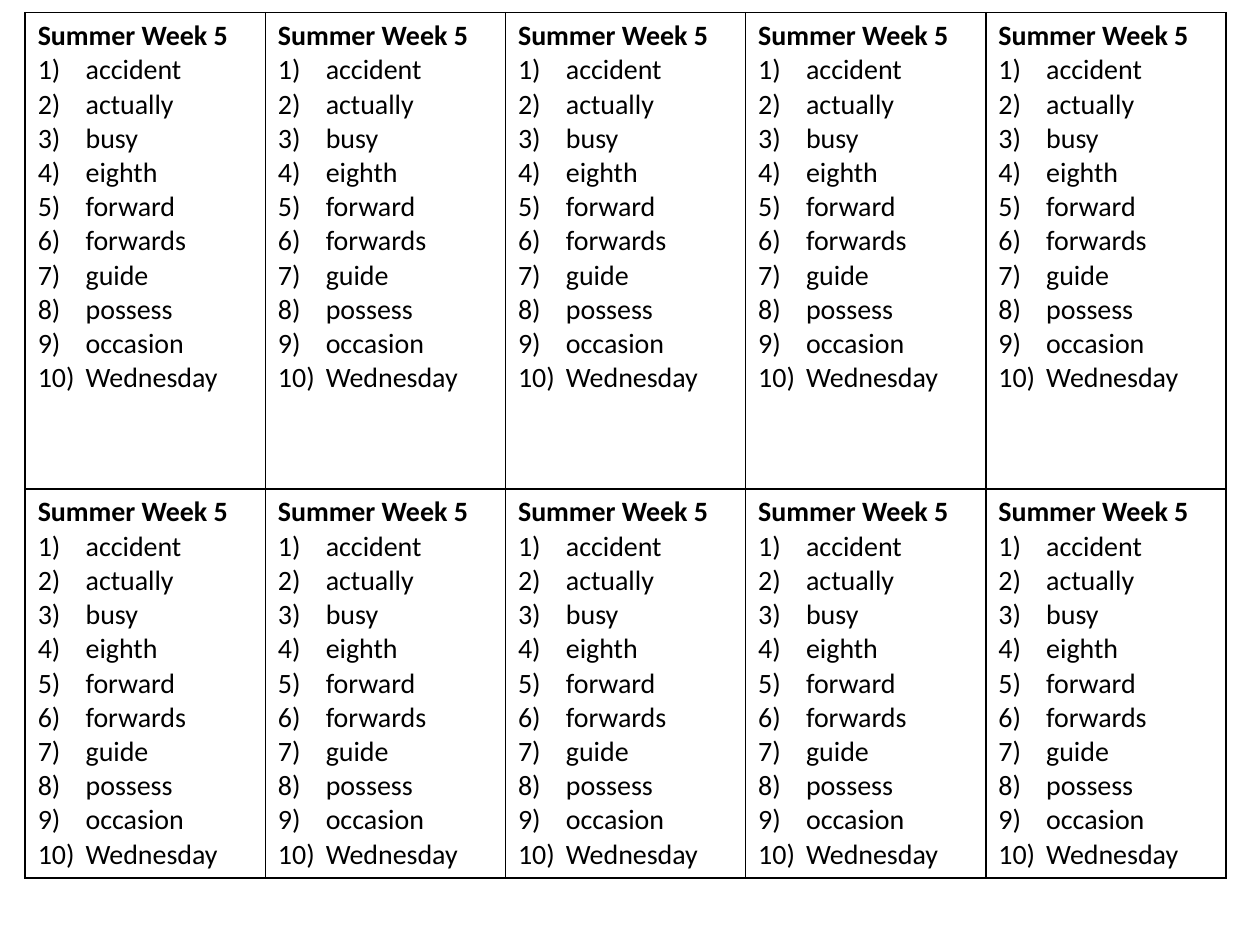
"""Build a sheet of ten identical weekly spelling lists in a ruled table."""
from lxml import etree
from pptx import Presentation
from pptx import util as u
from pptx.dml.color import RGBColor
from pptx.oxml import ns

TITLE = "Summer Week 5"
WORDS = ["accident", "actually", "busy", "eighth", "forward",
         "forwards", "guide", "possess", "occasion", "Wednesday"]
LEFT, TOP, WIDTH = 0.2, 0.1, 9.53
ROWS = [3.78, 3.03]
COLS = 5
INDENT = u.Inches(0.38)
FONT = "Calibri"
BLACK = RGBColor(0, 0, 0)


def add(parent, tag, **attrs):
    return etree.SubElement(parent, ns.qn(tag), attrs)


def write(para, text, size=16, bold=False, color=BLACK, number=False):
    run = para.add_run()
    run.text = text
    font = run.font
    font.name, font.size, font.bold = FONT, u.Pt(size), bold
    font.color.rgb = color
    if number:
        props = para._p.get_or_add_pPr()
        props.set("marL", str(INDENT))
        props.set("indent", str(-INDENT))
        add(props, "a:buFont", typeface="+mj-lt")
        add(props, "a:buAutoNum", type="arabicParenR")


def rule(cell, color=BLACK, width=1):
    cell.fill.background()
    props = cell._tc.get_or_add_tcPr()
    for spot, side in enumerate("LRTB"):
        line = add(props, f"a:ln{side}", w=str(u.Pt(width)))
        add(add(line, "a:solidFill"), "a:srgbClr", val=str(color))
        props.insert(spot, line)


def main():
    deck = Presentation()
    deck.slide_width, deck.slide_height = u.Inches(10), u.Inches(7.5)
    slide = deck.slides.add_slide(deck.slide_layouts[6])
    frame = slide.shapes.add_table(
        len(ROWS), COLS, u.Inches(LEFT), u.Inches(TOP),
        u.Inches(WIDTH), u.Inches(sum(ROWS)))
    table = frame.table
    table.first_row = table.horz_banding = False
    for row, height in zip(table.rows, ROWS):
        row.height = u.Inches(height)
    for col in table.columns:
        col.width = u.Inches(WIDTH / COLS)
    for cell in table.iter_cells():
        rule(cell)
        body = cell.text_frame
        write(body.paragraphs[0], TITLE, bold=True)
        for word in WORDS:
            write(body.add_paragraph(), word, number=True)
    deck.save("out.pptx")


if __name__ == "__main__":
    main()
